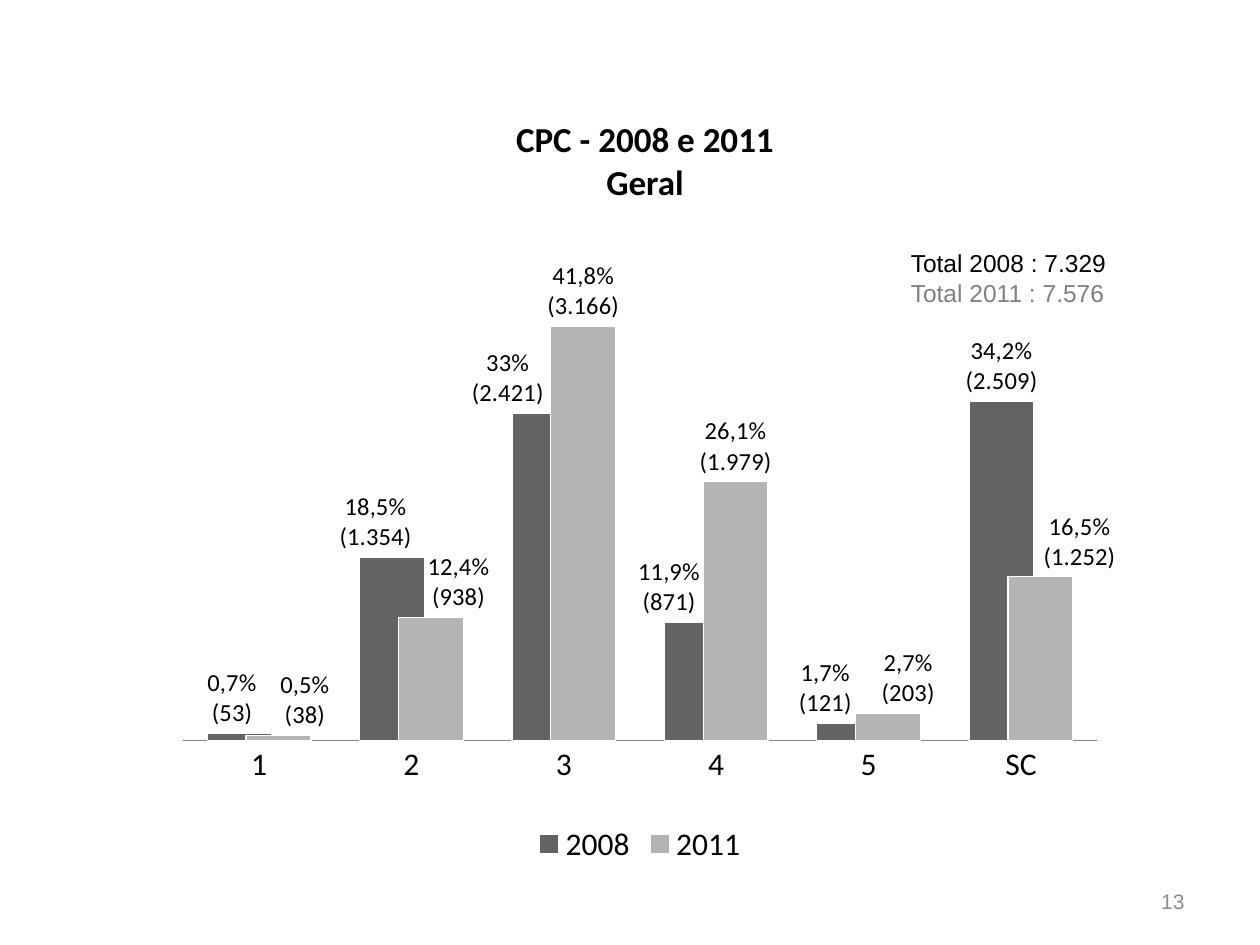
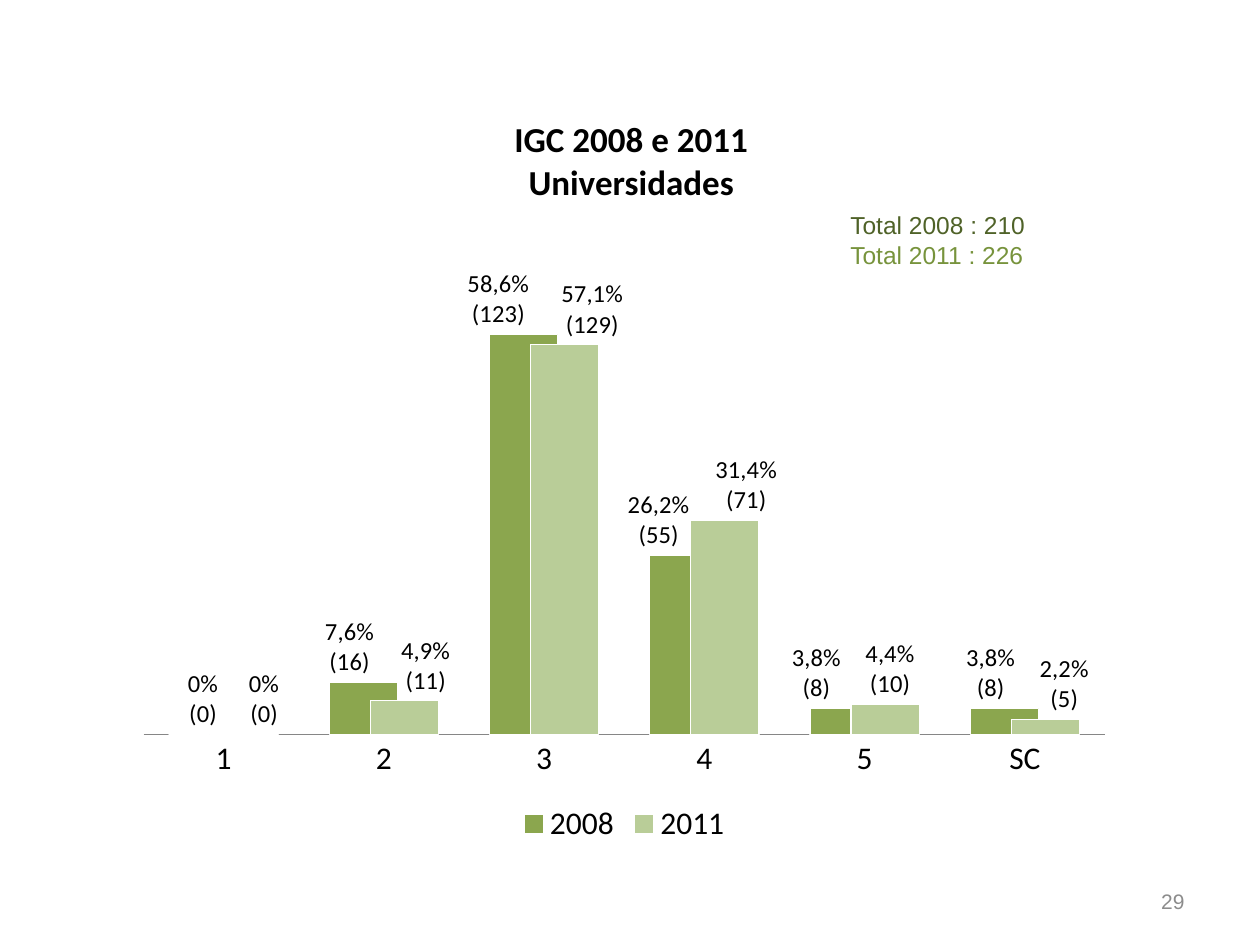
import pptx
import pptx.chart.data
import pptx.dml.color
import pptx.enum.chart
import pptx.enum.text
import pptx.oxml
import pptx.oxml.ns
import pptx.util
from pptx.util import Inches

COLORS = {
    "text": "000000", "page_number": "8C8C8C", "axis": "868686", "bar_edge": "FFFFFF",
    "dark_gray": "636363", "light_gray": "B4B4B4", "total_gray": "808080",
    "dark_green": "8BA64E", "light_green": "B9CD98",
    "total_dark_green": "4F6228", "total_light_green": "77933C",
}
YEARS = ("2008", "2011")
GRADES = ("1", "2", "3", "4", "5", "SC")

# Each series holds (percentage, count, sideways shift of the label in inches).
CPC = {
    "title": "CPC - 2008 e 2011\nGeral", "title_left": 0.62, "page": "13",
    "chart_box": (1.3, 2.02, 7.56, 4.88), "plot": (0.02, 0.065, 0.96, 0.725),
    "axis_maximum": 0.45, "bar_colors": ("dark_gray", "light_gray"),
    "totals": ("7.329", "7.576"), "totals_at": (7.13, 1.92),
    "total_colors": ("text", "total_gray"),
    "series": (
        (("0,7", "53", -0.06), ("18,5", "1.354", -0.13), ("33", "2.421", -0.29),
         ("11,9", "871", -0.22), ("1,7", "121", -0.19), ("34,2", "2.509", 0)),
        (("0,5", "38", 0.21), ("12,4", "938", 0.22), ("41,8", "3.166", 0),
         ("26,1", "1.979", 0), ("2,7", "203", 0.16), ("16,5", "1.252", 0.31)),
    ),
}
IGC = {
    "title": "IGC 2008 e 2011\nUniversidades", "title_left": 0.51, "page": "29",
    "chart_box": (0.98, 1.94, 7.95, 4.8), "plot": (0.02, 0.02, 0.96, 0.79),
    "axis_maximum": 0.7, "bar_colors": ("dark_green", "light_green"),
    "totals": ("210", "226"), "totals_at": (6.65, 1.62),
    "total_colors": ("total_dark_green", "total_light_green"),
    "series": (
        (("0", "0", 0), ("7,6", "16", -0.11), ("58,6", "123", -0.2),
         ("26,2", "55", -0.2), ("3,8", "8", -0.22), ("3,8", "8", -0.11)),
        (("0", "0", 0.16), ("4,9", "11", 0.17), ("57,1", "129", 0.22),
         ("31,4", "71", 0.17), ("4,4", "10", 0.04), ("2,2", "5", 0.15)),
    ),
}


def rgb(name):
    return pptx.dml.color.RGBColor.from_string(COLORS[name])


def style_font(font, size, name="Calibri", color="text", bold=False):
    font.size = pptx.util.Pt(size)
    font.name = name
    font.bold = bold
    font.color.rgb = rgb(color)


def manual_layout(target="", **values):
    """Return a c:layout element with the given values as fractions of the chart."""
    modes = '<c:xMode val="edge"/><c:yMode val="edge"/>' if target else ""
    target = f'<c:layoutTarget val="{target}"/>' if target else ""
    sizes = "".join(f'<c:{key} val="{value:.4f}"/>' for key, value in values.items())
    return pptx.oxml.parse_xml(
        f'<c:layout {pptx.oxml.ns.nsdecls("c")}><c:manualLayout>'
        f"{target}{modes}{sizes}</c:manualLayout></c:layout>")


def add_title(slide, text, left):
    title = slide.shapes.title
    title.left, title.top, title.width, title.height = map(Inches, (left, 0.76, 9, 1.02))
    title.text_frame.vertical_anchor = pptx.enum.text.MSO_ANCHOR.MIDDLE
    paragraph = title.text_frame.paragraphs[0]
    paragraph.text = text
    paragraph.alignment = pptx.enum.text.PP_ALIGN.CENTER
    style_font(paragraph.font, 20, bold=True)


def add_text_box(slide, box):
    text_frame = slide.shapes.add_textbox(*map(Inches, box)).text_frame
    text_frame.word_wrap = True
    return text_frame


def add_page_number(slide, number):
    text_frame = add_text_box(slide, (7.17, 6.95, 2.33, 0.4))
    text_frame.vertical_anchor = pptx.enum.text.MSO_ANCHOR.MIDDLE
    paragraph = text_frame.paragraphs[0]
    paragraph.text = number
    paragraph.alignment = pptx.enum.text.PP_ALIGN.RIGHT
    style_font(paragraph.font, 12, "Arial", "page_number")


def add_totals(slide, position, totals, colors):
    text_frame = add_text_box(slide, (*position, 2.68, 0.57))
    text_frame.text = "\n".join(f"Total {year} : {total}" for year, total in zip(YEARS, totals))
    for paragraph, color in zip(text_frame.paragraphs, colors):
        style_font(paragraph.font, 14, "Arial", color)


def label_point(point, percentage, count, shift):
    """Label a column; shift is a fraction of the chart width."""
    label = point.data_label
    label.text_frame.text = f"{percentage}%\n({count})"
    for paragraph in label.text_frame.paragraphs:
        for run in paragraph.runs:
            style_font(run.font, 14)
    label.position = pptx.enum.chart.XL_LABEL_POSITION.OUTSIDE_END
    if shift:
        index = point._element.xpath(f"c:dLbls/c:dLbl/c:idx[@val='{point._idx}']")[0]
        index.addnext(manual_layout(x=shift, y=0))


def style_series(series, results, color, chart_width):
    series.format.fill.solid()
    series.format.fill.fore_color.rgb = rgb(color)
    series.format.line.color.rgb = rgb("bar_edge")
    series.format.line.width = pptx.util.Pt(0.75)
    labels = series.data_labels
    labels.show_value = True
    labels.number_format = "0.0%"
    labels.number_format_is_linked = False
    style_font(labels.font, 14)
    for index, (percentage, count, shift) in enumerate(results):
        label_point(series.points[index], percentage, count, shift / chart_width)


def add_results_chart(slide, content):
    data = pptx.chart.data.CategoryChartData(number_format="0.0%")
    data.categories = GRADES
    for year, results in zip(YEARS, content["series"]):
        data.add_series(year, [round(float(percentage.replace(",", ".")) / 100, 3)
                               for percentage, _, _ in results])
    box = content["chart_box"]
    chart = slide.shapes.add_chart(
        pptx.enum.chart.XL_CHART_TYPE.COLUMN_CLUSTERED, *map(Inches, box), data).chart
    style_font(chart.font, 18)
    chart.has_title = False
    chart.has_legend = True
    chart.legend.position = pptx.enum.chart.XL_LEGEND_POSITION.BOTTOM
    chart.legend.include_in_layout = False

    chart.category_axis.major_tick_mark = pptx.enum.chart.XL_TICK_MARK.NONE
    chart.category_axis.format.line.color.rgb = rgb("axis")
    value_axis = chart.value_axis
    value_axis.visible = False
    value_axis.has_major_gridlines = False
    value_axis.minimum_scale = 0
    value_axis.maximum_scale = content["axis_maximum"]

    plot = chart.plots[0]
    plot.gap_width = 75
    plot.overlap = 40
    plot.vary_by_categories = False
    for series, results, color in zip(plot.series, content["series"], content["bar_colors"]):
        style_series(series, results, color, box[2])

    plot_area = chart._chartSpace.chart.plotArea
    for layout in plot_area.xpath("c:layout"):
        plot_area.remove(layout)
    plot_area.insert(0, manual_layout("inner", **dict(zip("xywh", content["plot"]))))


def add_comparison_slide(presentation, content):
    slide = presentation.slides.add_slide(presentation.slide_layouts.get_by_name("Title Only"))
    add_title(slide, content["title"], content["title_left"])
    add_page_number(slide, content["page"])
    add_results_chart(slide, content)
    add_totals(slide, content["totals_at"], content["totals"], content["total_colors"])


def main():
    presentation = pptx.Presentation()
    presentation.slide_width, presentation.slide_height = Inches(10), Inches(7.5)
    for content in (CPC, IGC):
        add_comparison_slide(presentation, content)
    presentation.save("out.pptx")


if __name__ == "__main__":
    main()
